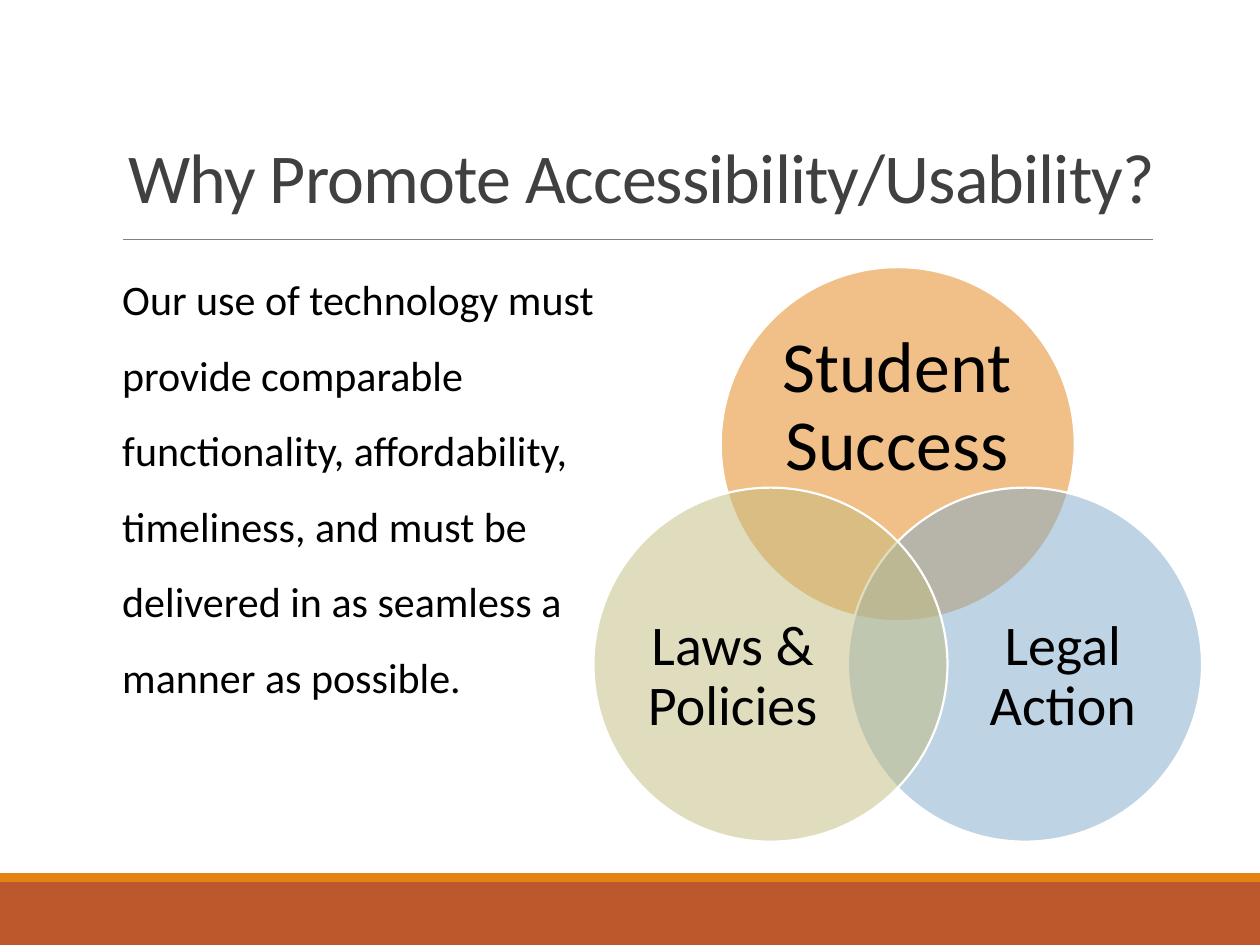
from lxml.etree import SubElement
from pptx import Presentation
from pptx.dml.color import RGBColor
from pptx.enum.shapes import MSO_CONNECTOR, MSO_SHAPE
from pptx.enum.text import MSO_ANCHOR, MSO_AUTO_SIZE, PP_ALIGN
from pptx.oxml.ns import qn
from pptx.util import Inches, Pt

COLORS = {
    "footer": "BD582C", "orange": "E48312", "rule": "808080", "title": "404040",
    "text": "000000", "blue": "7EA9CA", "olive": "C2BC80", "white": "FFFFFF",
}


def rgb(name):
    return RGBColor.from_string(COLORS[name])


def write(frame, text, size, color, spacing, align=PP_ALIGN.LEFT):
    """Fill a text frame with one formatted paragraph."""
    frame.text = text
    frame.word_wrap = True
    frame.auto_size = MSO_AUTO_SIZE.NONE
    paragraph = frame.paragraphs[0]
    paragraph.alignment = align
    paragraph.line_spacing = spacing
    paragraph.space_before = Pt(0)
    font = paragraph.runs[0].font
    font.name, font.size = "Calibri", Pt(size)
    font.color.rgb = rgb(color)
    return paragraph


deck = Presentation()
deck.slide_width, deck.slide_height = Inches(10), Inches(7.5)
slide = deck.slides.add_slide(deck.slide_layouts[1])
shapes = slide.shapes
title, message = slide.placeholders

# Footer bands
for top, height, color in ((7, 0.5, "footer"), (6.93, 0.07, "orange")):
    band = shapes.add_shape(MSO_SHAPE.RECTANGLE, 0, Inches(top),
                            deck.slide_width, Inches(height))
    band.shadow.inherit = False
    band.fill.solid()
    band.fill.fore_color.rgb = rgb(color)
    band.line.fill.background()

# Rule under the title
rule = shapes.add_connector(MSO_CONNECTOR.STRAIGHT, Inches(0.98), Inches(1.9),
                            Inches(9.15), Inches(1.9))
rule.line.color.rgb = rgb("rule")
rule.line.width = Pt(0.5)
SubElement(rule._element.spPr, qn("a:effectLst"))

# Title
title.left, title.top = Inches(0.92), Inches(0.93)
title.width, title.height = Inches(8.93), Inches(0.85)
heading = write(title.text_frame, "Why Promote Accessibility/Usability?",
                40, "title", 0.85)
title.text_frame.vertical_anchor = MSO_ANCHOR.BOTTOM
heading.runs[0].font._element.set("spc", "-50")

# Message, second level without bullet or indent
message.left, message.top = Inches(0.87), Inches(1.92)
message.width, message.height = Inches(4.46), Inches(4.04)
statement = write(
    message.text_frame,
    "Our use of technology must provide comparable functionality, "
    "affordability, timeliness, and must be delivered in as seamless a "
    "manner as possible.",
    24, "text", 1.5)
statement.level = 1
properties = statement._p.get_or_add_pPr()
properties.set("marL", "0")
properties.set("indent", "0")
SubElement(properties, qn("a:buNone"))

# Venn diagram: circle position, then label box and size
DIAMETER = 2.81
SIDE_LABEL = (1.69, 1.55)
venn = (
    ("Student Success", "orange", 5.72, 2.12, 6.09, 2.61, (2.06, 1.26), 41),
    ("Legal Action", "blue", 6.73, 3.87, 7.59, 4.6, SIDE_LABEL, 32),
    ("Laws & Policies", "olive", 4.71, 3.87, 4.97, 4.6, SIDE_LABEL, 32),
)
for reason, color, left, top, label_left, label_top, label_size, size in venn:
    circle = shapes.add_shape(MSO_SHAPE.OVAL, Inches(left), Inches(top),
                              Inches(DIAMETER), Inches(DIAMETER))
    circle.shadow.inherit = False
    circle.fill.solid()
    circle.fill.fore_color.rgb = rgb(color)
    tint = circle._element.spPr.find(qn("a:solidFill"))[0]
    SubElement(tint, qn("a:alpha"), val="50000")
    circle.line.color.rgb = rgb("white")
    circle.line.width = Pt(1.25)

    label = shapes.add_textbox(Inches(label_left), Inches(label_top),
                               *map(Inches, label_size)).text_frame
    label.margin_left = label.margin_right = 0
    label.margin_top = label.margin_bottom = 0
    label.vertical_anchor = MSO_ANCHOR.MIDDLE
    write(label, reason, size, "text", 0.9, PP_ALIGN.CENTER)

deck.save("out.pptx")
